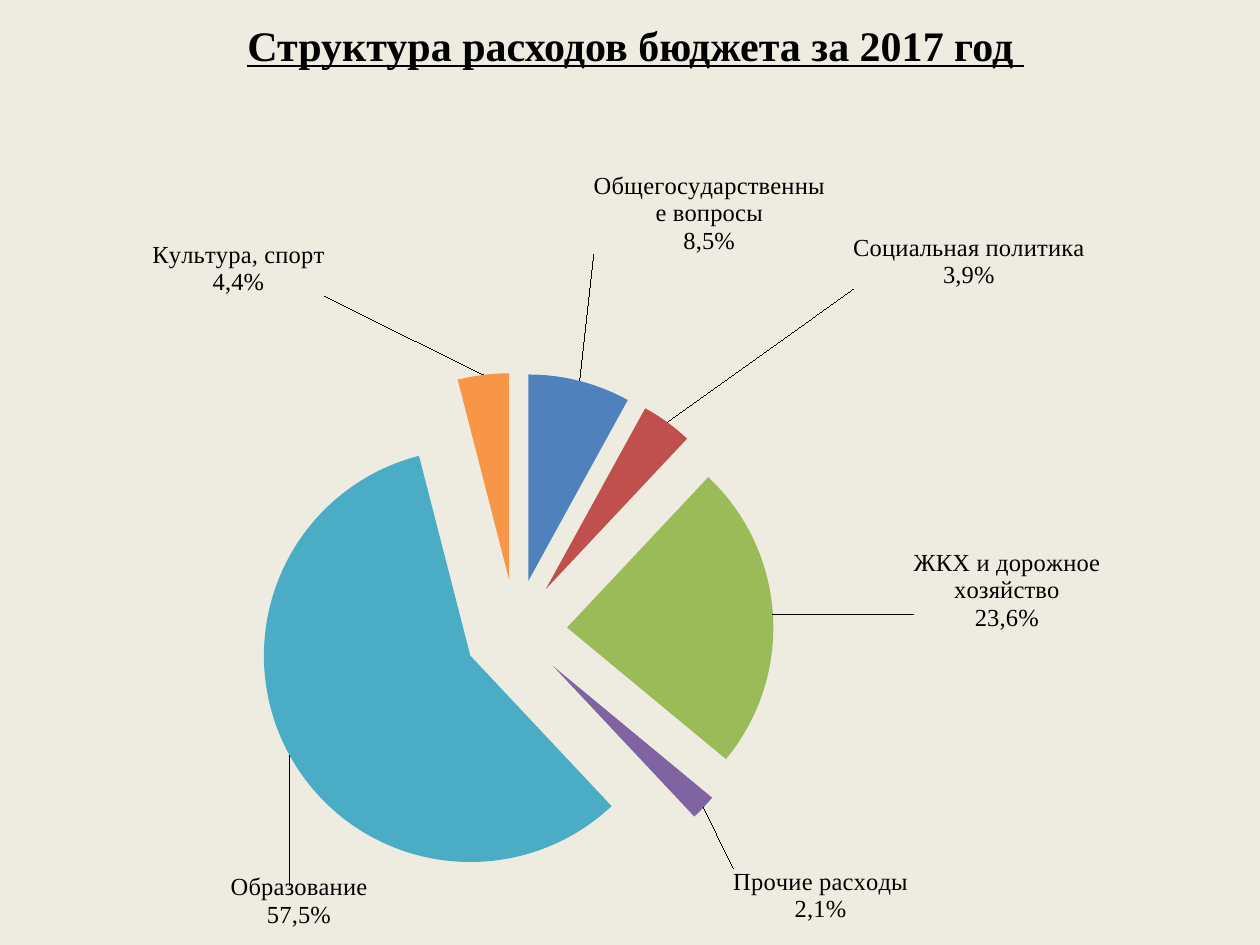
from dataclasses import dataclass

from lxml.etree import SubElement
from pptx import Presentation
from pptx.chart.data import CategoryChartData
from pptx.dml.color import RGBColor
from pptx.enum.chart import XL_CHART_TYPE, XL_LABEL_POSITION
from pptx.enum.text import MSO_ANCHOR, PP_ALIGN
from pptx.oxml import parse_xml
from pptx.oxml.ns import nsdecls, qn
from pptx.util import Inches, Pt


@dataclass(frozen=True)
class Theme:
    background: str = "EEECE1"
    ink: str = "000000"
    text_font: str = "Times New Roman"
    chart_font: str = "Calibri"
    title_size: int = 24
    label_size: int = 14
    chart_size: int = 10


THEME = Theme()

# Name, share in the label, slice value, colour, label shift (parts of the chart)
EXPENSES = [
    ("Общегосударственные вопросы", "8,5%", 8, "4F81BD", (0.01, -0.15)),
    ("Социальная политика", "3,9%", 4, "C0504D", (0.15, -0.16)),
    ("ЖКХ и дорожное хозяйство", "23,6%", 24, "9BBB59", (0.11, -0.03)),
    ("Прочие расходы", "2,1%", 2, "8064A2", (0.02, 0.07)),
    ("Образование", "57,5%", 58, "4BACC6", (0.07, 0.16)),
    ("Культура, спорт", "4,4%", 4, "F79646", (-0.13, -0.09)),
]


def style_font(font, size, name=THEME.text_font, bold=False, underline=False):
    font.name = name
    font.size = Pt(size)
    font.bold = bold
    font.underline = underline
    font.color.rgb = RGBColor.from_string(THEME.ink)


def write_text(frame, text, align=PP_ALIGN.CENTER, **font_format):
    frame.text = text
    for paragraph in frame.paragraphs:
        paragraph.alignment = align
        for run in paragraph.runs:
            style_font(run.font, **font_format)


def manual_layout(**settings):
    """Return a c:layout element with the settings in the order given."""
    layout = parse_xml(f"<c:layout {nsdecls('c')}/>")
    manual = SubElement(layout, qn("c:manualLayout"))
    for tag, value in settings.items():
        SubElement(manual, qn(f"c:{tag}")).set("val", str(value))
    return layout


def add_title(slide, text):
    title = slide.shapes.title
    title.left, title.top = Inches(0.28), Inches(0)
    title.width, title.height = Inches(9.53), Inches(0.71)
    title.text_frame.vertical_anchor = MSO_ANCHOR.MIDDLE
    write_text(title.text_frame, text, size=THEME.title_size, bold=True, underline=True)


def place_plot(chart):
    plot_area = chart.plots[0].series[0]._element.getparent().getparent()
    for old in plot_area.findall(qn("c:layout")):
        plot_area.remove(old)
    plot_area.insert(0, manual_layout(
        layoutTarget="inner", xMode="edge", yMode="edge",
        x=0.07, y=0.3, w=0.67, h=0.65))


def explode(series, percent):
    """Pull every slice outwards by a percentage of the radius."""
    explosion = parse_xml(f'<c:explosion {nsdecls("c")} val="{percent}"/>')
    following = next(child for child in series._element
                     if child.tag in (qn("c:dPt"), qn("c:dLbls"), qn("c:cat")))
    following.addprevious(explosion)


def label_slice(point, text, shift):
    label = point.data_label
    write_text(label.text_frame, text, size=THEME.label_size)
    label.position = XL_LABEL_POSITION.OUTSIDE_END
    element = label._dLbl
    element.find(qn("c:idx")).addnext(manual_layout(x=shift[0], y=shift[1]))
    for tag, value in (("showVal", 0), ("showCatName", 1), ("showPercent", 1)):
        element.find(qn(f"c:{tag}")).set("val", str(value))


def show_labels(series):
    labels = series.data_labels
    labels.show_value = False
    labels.show_category_name = True
    labels.show_percentage = True
    labels.position = XL_LABEL_POSITION.OUTSIDE_END
    style_font(labels.font, THEME.label_size)
    leader_tag = qn("c:showLeaderLines")
    leaders = labels._element.find(leader_tag)
    if leaders is None:
        leaders = SubElement(labels._element, leader_tag)
    leaders.set("val", "1")


def add_expense_pie(slide):
    data = CategoryChartData()
    data.categories = [name for name, *_ in EXPENSES]
    data.add_series("Расходы", [value for _, _, value, *_ in EXPENSES])
    chart = slide.shapes.add_chart(
        XL_CHART_TYPE.PIE, Inches(0.2), Inches(1.07),
        Inches(9.61), Inches(6.3), data).chart
    chart.has_title = False
    chart.has_legend = False
    style_font(chart.font, THEME.chart_size, name=THEME.chart_font)
    chart.plots[0].vary_by_categories = True

    series = chart.plots[0].series[0]
    show_labels(series)
    for index, (name, share, _, color, shift) in enumerate(EXPENSES):
        point = series.points[index]
        point.format.fill.solid()
        point.format.fill.fore_color.rgb = RGBColor.from_string(color)
        point.format.line.fill.background()
        label_slice(point, f"{name}\n{share}", shift)
    explode(series, 25)
    place_plot(chart)


def main():
    deck = Presentation()
    deck.slide_width, deck.slide_height = Inches(10), Inches(7.5)
    slide = deck.slides.add_slide(deck.slide_layouts.get_by_name("Title Only"))
    slide.background.fill.solid()
    slide.background.fill.fore_color.rgb = RGBColor.from_string(THEME.background)
    add_title(slide, "Структура расходов бюджета за 2017 год ")
    add_expense_pie(slide)
    deck.save("out.pptx")


if __name__ == "__main__":
    main()
